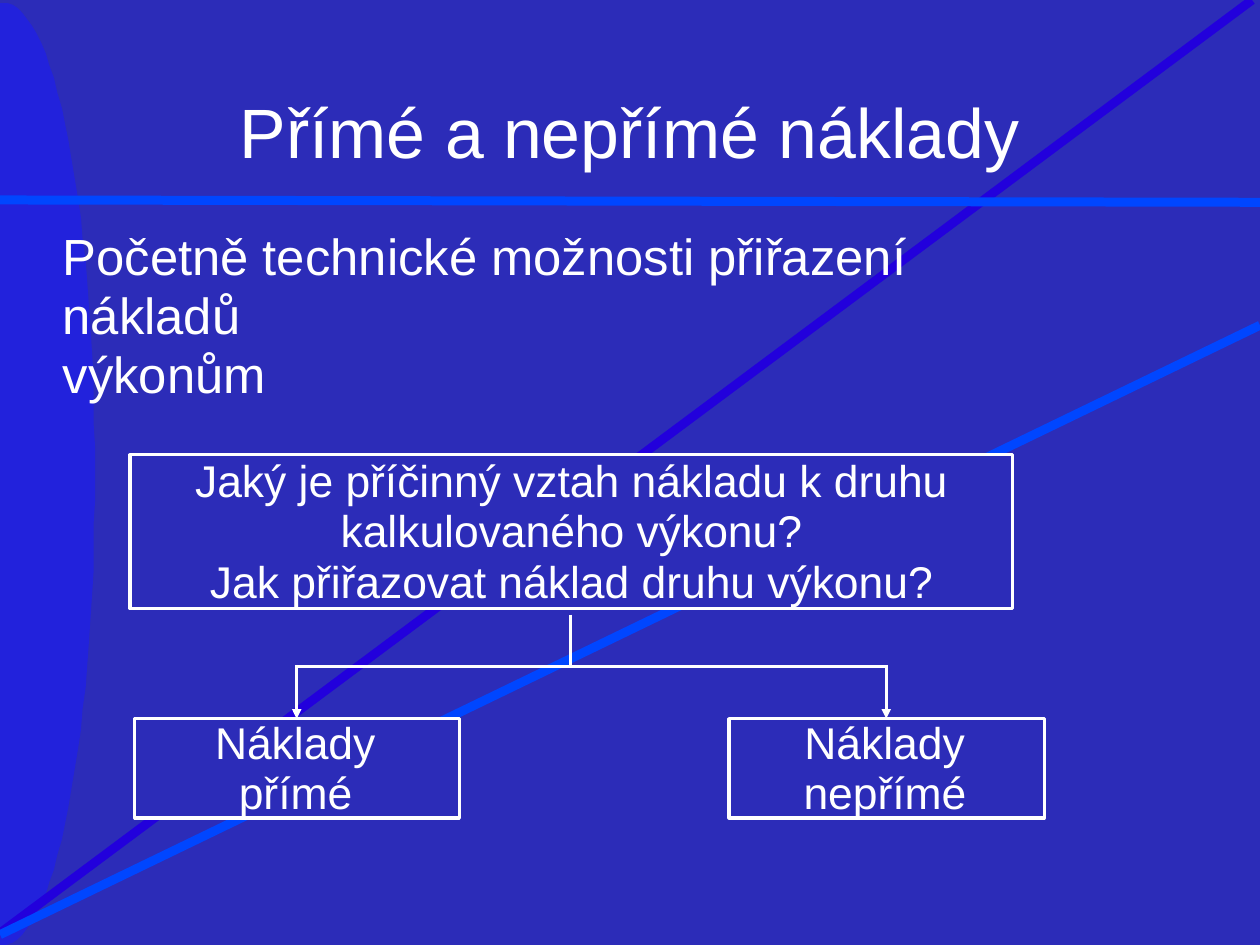
import math

from pptx import Presentation
from pptx.dml.color import RGBColor
from pptx.enum import shapes, text
from pptx.oxml.ns import qn
from pptx.util import Pt
from lxml import etree

WIDTH, HEIGHT = 794, 595.5
NAVY, BLUE, VIOLET, AZURE, WHITE = "2C2CB8", "2222DC", "2200DC", "0046FF", "FFFFFF"

# Start and end point, colour
STRIPES = [
    ((789, 0), (0, 588), VIOLET),
    ((WIDTH, 127.5), (0, 126), AZURE),
    ((WIDTH, 205), (0, 589), AZURE),
]

# Position and size, font size, (text, line spacing) per paragraph
TEXTS = [
    ((151, 56, 600, 52), 44, [("Přímé a nepřímé náklady", None)]),
    ((39.5, 143.3, 640, 111), 32, [
        ("Početně technické možnosti přiřazení nákladů", 37),
        ("výkonům", 37),
    ]),
]
QUESTION_BOX = (82, 286.6, 556, 97)
QUESTIONS = [
    ("Jaký je příčinný vztah nákladu k druhu", 32.5),
    ("kalkulovaného výkonu?", 31.3),
    ("Jak přiřazovat náklad druhu výkonu?", 32.4),
]

# Position and size, text, left margin, first-line indent, arrow x
COST_BOXES = [
    ((85, 452.9, 204.5, 62.6), "Náklady přímé", 65.5, -15, 187),
    ((459.4, 452.9, 198.7, 62.6), "Náklady nepřímé", 47, 0.5, 558.5),
]
STEM_X, STEM_TOP, BRANCH_Y = 359.6, 387.4, 420


def color(value):
    return RGBColor.from_string(value)


def add_line(slide, start, end, line_color, width, arrow=False):
    line = slide.shapes.add_connector(
        shapes.MSO_CONNECTOR.STRAIGHT, *(Pt(value) for value in start + end))
    line.line.color.rgb = color(line_color)
    line.line.width = Pt(width)
    properties = line._element.spPr
    if arrow:
        etree.SubElement(properties.find(qn("a:ln")), qn("a:tailEnd"), type="triangle")
    etree.SubElement(properties, qn("a:effectLst"))


def add_ellipse_edge(slide, center_x=2.5, center_y=298.5, radius_x=57.3, radius_y=297, steps=60):
    """Draw the right half of an ellipse along the left edge of the slide."""
    angles = [math.pi * step / steps for step in range(steps + 1)]
    curve = [(center_x + radius_x * math.sin(angle), center_y - radius_y * math.cos(angle))
             for angle in angles]
    builder = slide.shapes.build_freeform(0, center_y - radius_y, scale=Pt(1))
    builder.add_line_segments(curve + [(0, center_y + radius_y)])
    shape = builder.convert_to_shape()
    shape.shadow.inherit = False
    shape.fill.solid()
    shape.fill.fore_color.rgb = color(BLUE)
    shape.line.fill.background()


def write(shape, paragraphs, size, align=text.PP_ALIGN.LEFT, margin=0, indent=0):
    frame = shape.text_frame
    frame.word_wrap = True
    frame.vertical_anchor = text.MSO_ANCHOR.TOP
    frame.margin_left = frame.margin_top = frame.margin_right = frame.margin_bottom = 0
    frame.text = "\n".join(content for content, _ in paragraphs)
    for paragraph, (_, spacing) in zip(frame.paragraphs, paragraphs):
        paragraph.alignment = align
        paragraph.font.name = "Arial"
        paragraph.font.size = Pt(size)
        paragraph.font.color.rgb = color(WHITE)
        if spacing:
            paragraph.line_spacing = Pt(spacing)
        properties = paragraph._p.get_or_add_pPr()
        properties.set("marL", str(Pt(margin)))
        properties.set("indent", str(Pt(indent)))


def add_box(slide, bounds):
    box = slide.shapes.add_shape(shapes.MSO_SHAPE.RECTANGLE, *map(Pt, bounds))
    box.shadow.inherit = False
    box.fill.solid()
    box.fill.fore_color.rgb = color(NAVY)
    box.line.color.rgb = color(WHITE)
    box.line.width = Pt(2)
    return box


def main():
    presentation = Presentation()
    presentation.slide_width, presentation.slide_height = Pt(WIDTH), Pt(HEIGHT)
    slide = presentation.slides.add_slide(presentation.slide_layouts[6])
    slide.background.fill.solid()
    slide.background.fill.fore_color.rgb = color(NAVY)

    add_ellipse_edge(slide)
    for start, end, stripe_color in STRIPES:
        add_line(slide, start, end, stripe_color, 5.67)

    for bounds, size, paragraphs in TEXTS:
        write(slide.shapes.add_textbox(*map(Pt, bounds)), paragraphs, size)

    write(add_box(slide, QUESTION_BOX), QUESTIONS, 28, text.PP_ALIGN.CENTER)
    add_line(slide, (STEM_X, STEM_TOP), (STEM_X, BRANCH_Y), WHITE, 2)
    add_line(slide, (COST_BOXES[0][-1], BRANCH_Y), (COST_BOXES[-1][-1], BRANCH_Y), WHITE, 2)
    for bounds, label, margin, indent, arrow_x in COST_BOXES:
        write(add_box(slide, bounds), [(label, 31.3)], 28, margin=margin, indent=indent)
        add_line(slide, (arrow_x, BRANCH_Y - 1), (arrow_x, bounds[1]), WHITE, 2, arrow=True)

    presentation.save("out.pptx")


if __name__ == "__main__":
    main()
